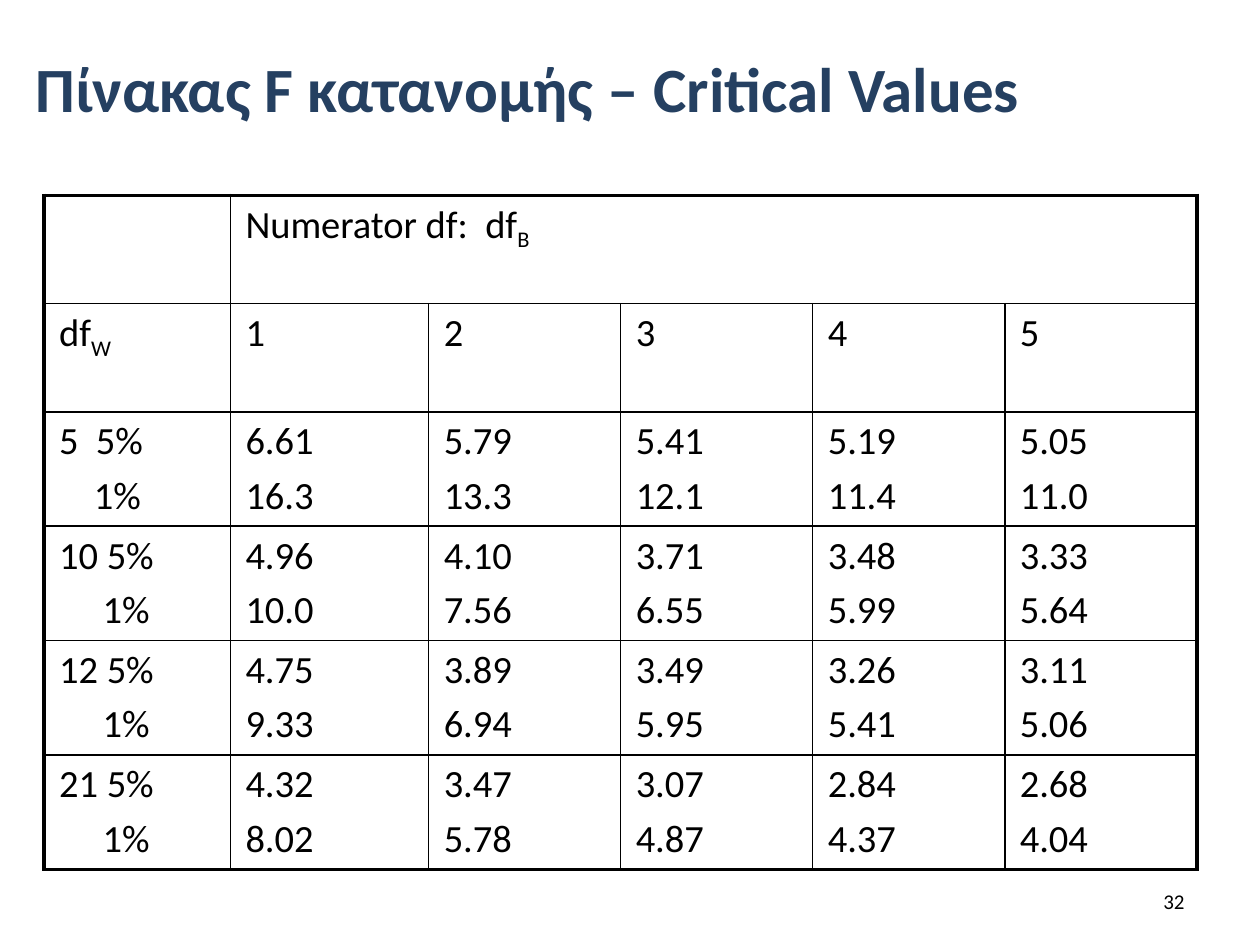
import pptx
import pptx.dml.color
import pptx.enum.text
import pptx.oxml.ns
import pptx.util
from lxml import etree

Pt = pptx.util.Pt
FONT = "Calibri"
BLACK = "000000"
NAVY = "254061"

COLUMN_WIDTHS = [106.5, 113.3] + [109.75] * 4
HEADER_HEIGHT, BODY_HEIGHT = 61.9, 65.35
SPACE_WIDTH = 4.97
THICK, THIN = 2.25, 1

# Denominator label, indent of the 1% line in space widths, 5% values, 1% values
CRITICAL_VALUES = [
    ("5  5%", 4, "6.61 5.79 5.41 5.19 5.05", "16.3 13.3 12.1 11.4 11.0"),
    ("10 5%", 5, "4.96 4.10 3.71 3.48 3.33", "10.0 7.56 6.55 5.99 5.64"),
    ("12 5%", 5, "4.75 3.89 3.49 3.26 3.11", "9.33 6.94 5.95 5.41 5.06"),
    ("21 5%", 5, "4.32 3.47 3.07 2.84 2.68", "8.02 5.78 4.87 4.37 4.04"),
]


def color(value):
    return pptx.dml.color.RGBColor.from_string(value)


def style_font(font, size, value=BLACK, bold=False):
    font.name = FONT
    font.size = Pt(size)
    font.bold = bold
    font.color.rgb = color(value)


def add_text(slide, box, text, size, value=BLACK, bold=False, align="LEFT", indent=0):
    shape = slide.shapes.add_textbox(*map(Pt, box))
    frame = shape.text_frame
    frame.word_wrap = True
    frame.vertical_anchor = pptx.enum.text.MSO_ANCHOR.MIDDLE
    paragraph = frame.paragraphs[0]
    paragraph.text = text
    paragraph.alignment = pptx.enum.text.PP_ALIGN[align]
    style_font(paragraph.font, size, value, bold)
    set_indent(paragraph, indent)


def set_indent(paragraph, indent):
    properties = paragraph._p.get_or_add_pPr()
    properties.set("marL", str(Pt(indent)))
    properties.set("indent", "0")


def set_borders(cell, widths):
    """Draw the borders from a dictionary of side (L, R, T, B) to line width."""
    properties = cell._tc.get_or_add_tcPr()
    for position, (side, width) in enumerate(widths.items()):
        line = etree.Element(pptx.oxml.ns.qn(f"a:ln{side}"), w=str(Pt(width)))
        fill = etree.SubElement(line, pptx.oxml.ns.qn("a:solidFill"))
        etree.SubElement(fill, pptx.oxml.ns.qn("a:srgbClr"), val=BLACK)
        properties.insert(position, line)


def fill_cell(cell, lines, subscript="", second_indent=0):
    cell.margin_left = cell.margin_right = Pt(8.64)
    cell.margin_top = cell.margin_bottom = Pt(3.6)
    cell.fill.background()
    cell.text = "\n".join(lines)
    for paragraph in cell.text_frame.paragraphs:
        paragraph.space_before = Pt(4.4)
        style_font(paragraph.font, 22)
    if second_indent:
        set_indent(cell.text_frame.paragraphs[1], second_indent)
    if subscript:
        run = cell.text_frame.paragraphs[0].add_run()
        run.text = subscript
        run.font._element.set("baseline", "-25000")


def add_critical_values(slide, box):
    row_count, column_count = 2 + len(CRITICAL_VALUES), len(COLUMN_WIDTHS)
    table = slide.shapes.add_table(row_count, column_count, *map(Pt, box)).table
    table.first_row = table.horz_banding = False
    for column, width in zip(table.columns, COLUMN_WIDTHS):
        column.width = Pt(width)
    for index, row in enumerate(table.rows):
        row.height = Pt(HEADER_HEIGHT if index < 2 else BODY_HEIGHT)

    table.cell(0, 1).merge(table.cell(0, column_count - 1))
    fill_cell(table.cell(0, 0), [""])
    fill_cell(table.cell(0, 1), ["Numerator df:  df"], "B")
    fill_cell(table.cell(1, 0), ["df"], "W")
    for column in range(1, column_count):
        fill_cell(table.cell(1, column), [str(column)])
    for row, (label, spaces, five, one) in enumerate(CRITICAL_VALUES, 2):
        fill_cell(table.cell(row, 0), [label, "1%"], second_indent=spaces * SPACE_WIDTH)
        for column, pair in enumerate(zip(five.split(), one.split()), 1):
            fill_cell(table.cell(row, column), pair)

    for row in range(row_count):
        for column in range(column_count):
            cell = table.cell(row, column)
            last_column = column_count - 1
            right_column = last_column if cell.is_merge_origin else column
            set_borders(cell, {
                "L": THICK if column == 0 else THIN,
                "R": THICK if right_column == last_column else THIN,
                "T": THICK if row == 0 else THIN,
                "B": THICK if row == row_count - 1 else THIN,
            })


def main():
    presentation = pptx.Presentation()
    presentation.slide_width, presentation.slide_height = Pt(720), Pt(540)
    slide = presentation.slides.add_slide(presentation.slide_layouts[6])
    add_text(slide, (0, 0, 720, 100), "Πίνακας F κατανομής – Critical Values",
             36, NAVY, bold=True, indent=13.5)
    add_critical_values(slide, (25.2, 111.6, 658.8, 385.2))
    add_text(slide, (516, 500.4, 168, 28.8), "32", 12, align="RIGHT")
    presentation.save("out.pptx")


if __name__ == "__main__":
    main()
